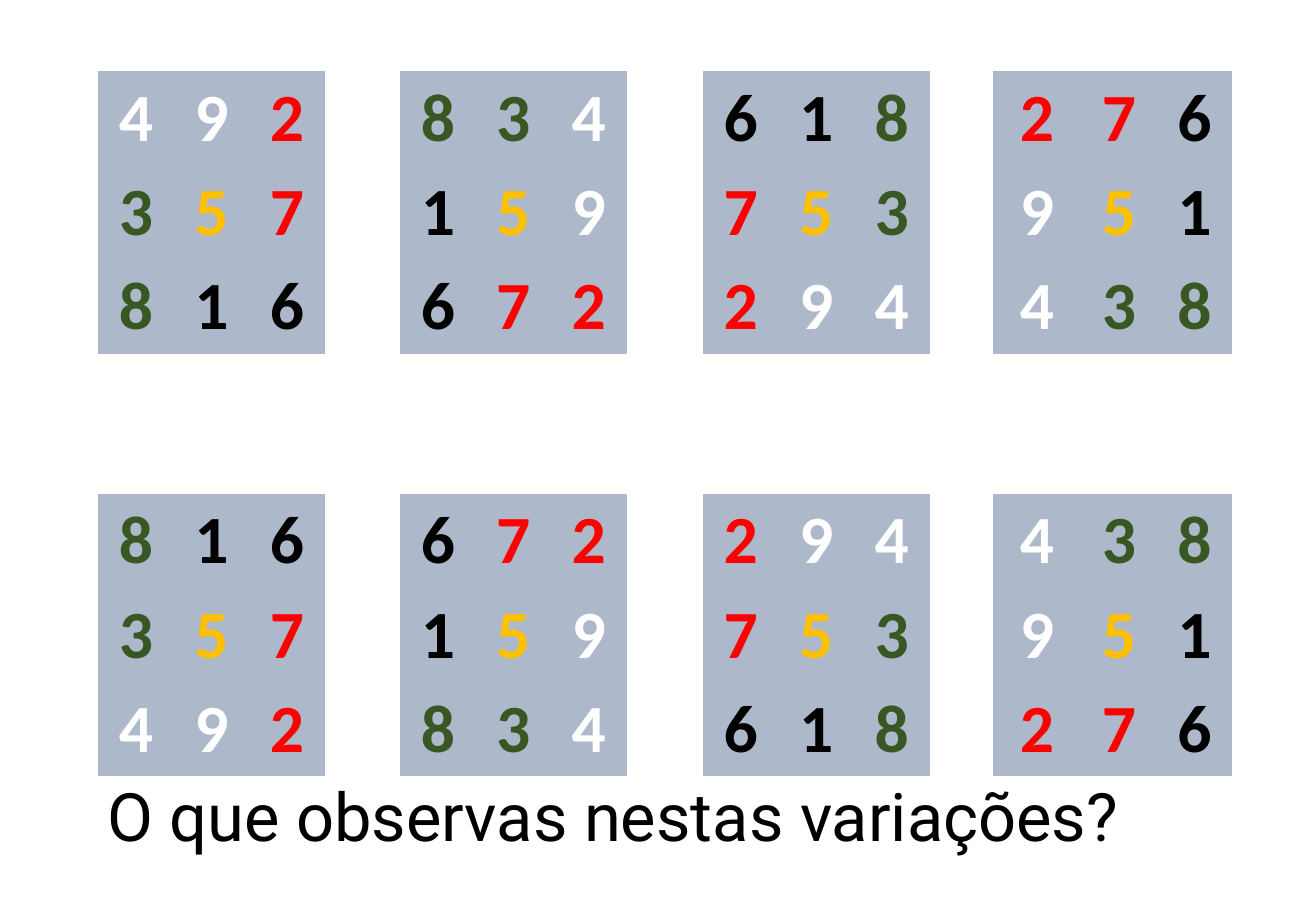
from pptx import Presentation, util as u
from pptx.dml.color import RGBColor
from pptx.enum import text
from pptx.oxml.ns import qn

SCALE = 914400 / 121.5
HUES = {"white": "FFFFFF", "red": "FF0000", "green": "385723",
        "gold": "FFC000", "black": "000000", "panel": "ADB9CA"}
TONES = {"49": "white", "27": "red", "38": "green", "5": "gold", "16": "black"}
DIGITS = {digit: tone for group, tone in TONES.items() for digit in group}
PLAIN = "{2D5ABB26-0587-4C30-8999-92F81FD0307C}"  # table style without grid


def px(n):
    return u.Emu(round(n * SCALE))


def hue(name):
    return RGBColor.from_string(HUES[name])


def turn(square):
    """Rotate a square a quarter turn clockwise."""
    return [list(row) for row in zip(*square[::-1])]


class Board:
    def __init__(self, wide, high):
        self.deck = Presentation()
        self.deck.slide_width, self.deck.slide_height = px(wide), px(high)
        self.slide = self.deck.slides.add_slide(self.deck.slide_layouts[6])

    def style(self, para, face, size, tone, bold=False):
        for run in para.runs:
            font = run.font
            font.name, font.size, font.bold = face, u.Pt(size), bold
            font.color.rgb = hue(tone)

    def label(self, words, x, y, w, h):
        frame = self.slide.shapes.add_textbox(px(x), px(y), px(w), px(h)).text_frame
        frame.word_wrap = True
        frame.margin_left = frame.margin_right = 0
        frame.margin_top = frame.margin_bottom = 0
        frame.text = words
        para = frame.paragraphs[0]
        para.line_spacing = 0.9
        self.style(para, "Roboto", 39.6, "black")

    def table(self, x, y, cols, rows):
        shape = self.slide.shapes.add_table(
            len(rows), len(cols), px(x), px(y), px(sum(cols)), px(sum(rows)))
        table = shape.table
        table.first_row = table.horz_banding = False
        table._tbl.tblPr.find(qn("a:tableStyleId")).text = PLAIN
        for col, w in zip(table.columns, cols):
            col.width = px(w)
        for row, h in zip(table.rows, rows):
            row.height = px(h)
        for cell in table.iter_cells():
            cell.fill.background()
        return table

    def square(self, table, digits, top, left):
        for r, row in enumerate(digits, top):
            for c, digit in enumerate(row, left):
                cell = table.cell(r, c)
                cell.fill.solid()
                cell.fill.fore_color.rgb = hue("panel")
                cell.margin_left = cell.margin_right = px(10)
                cell.margin_top = cell.margin_bottom = px(6)
                cell.text = digit
                para = cell.text_frame.paragraphs[0]
                para.alignment = text.PP_ALIGN.CENTER
                self.style(para, "Calibri", 40, DIGITS[digit], True)


def main():
    board = Board(1316, 911)
    trio = [76, 75, 76]
    cols = trio + [75] + trio + [76] + trio + [63] + [89, 75, 76]
    rows = [94] * 3 + [70] * 2 + [94] * 3
    table = board.table(98, 71, cols, rows)
    magic = [list(row) for row in ("492", "357", "816")]
    for left in range(0, len(cols), 4):
        board.square(table, magic, 0, left)
        board.square(table, magic[::-1], 5, left)
        magic = turn(magic)
    board.label("O que observas nestas variações?", 107, 784, 1115, 70)
    board.deck.save("out.pptx")


if __name__ == "__main__":
    main()
